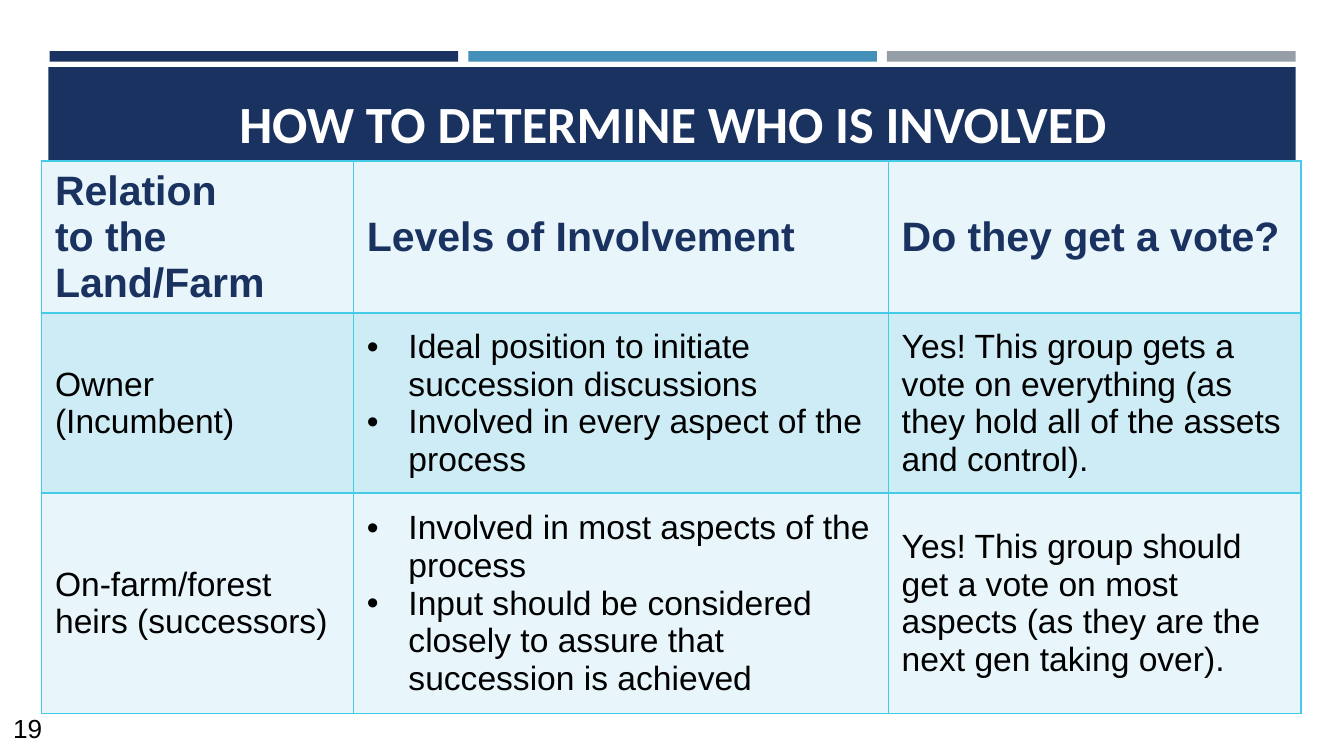
import pptx
import pptx.util
import pptx.dml.color
import pptx.enum.shapes
import pptx.enum.text
import pptx.oxml.ns
import lxml.etree

Inches, Pt = pptx.util.Inches, pptx.util.Pt
RGB = pptx.dml.color.RGBColor
qn = pptx.oxml.ns.qn
ANCHOR = pptx.enum.text.MSO_ANCHOR

NAVY = RGB(0x1A, 0x32, 0x60)
BLUE = RGB(0x45, 0x90, 0xB8)
GREY = RGB(0x96, 0x9F, 0xA7)
PALE = RGB(0xE8, 0xF6, 0xFB)
AQUA = RGB(0xCE, 0xEC, 0xF6)
CYAN = RGB(0x45, 0xCB, 0xE8)
WHITE = RGB(0xFF, 0xFF, 0xFF)
BLACK = RGB(0, 0, 0)


def style(para, face, size, color, bold=False):
    font = para.font
    font.name, font.size, font.bold = face, Pt(size), bold
    font.color.rgb = color


def edge(cell):
    """Draw a thin line on all four sides of a table cell."""
    props = cell._tc.get_or_add_tcPr()
    for i, tag in enumerate(("a:lnL", "a:lnR", "a:lnT", "a:lnB")):
        line = props.makeelement(qn(tag), {"w": str(Pt(1))})
        fill = lxml.etree.SubElement(line, qn("a:solidFill"))
        lxml.etree.SubElement(fill, qn("a:srgbClr"), val=str(CYAN))
        props.insert(i, line)


deck = pptx.Presentation()
deck.slide_width = Inches(10)
deck.slide_height = deck.slide_width * 9 // 16
slide = deck.slides.add_slide(deck.slide_layouts[5])
shapes = slide.shapes

# Three bars above the title band
bars = [(0.37 + 3.115 * i, 0.38, 3.04, 0.08, color)
        for i, color in enumerate((NAVY, BLUE, GREY))]
for x, y, w, h, color in bars + [(0.36, 0.5, 9.28, 0.98, NAVY)]:
    bar = shapes.add_shape(pptx.enum.shapes.MSO_SHAPE.RECTANGLE,
                           Inches(x), Inches(y), Inches(w), Inches(h))
    bar.shadow.inherit = False
    bar.fill.solid()
    bar.fill.fore_color.rgb = color
    bar.line.fill.background()

# Slide number
box = shapes.add_textbox(Inches(0), Inches(5.25), Inches(0.53), Inches(0.37))
box.text_frame.word_wrap = True
box.text_frame.text = "19"
style(box.text_frame.paragraphs[0], "Arial", 14, BLACK)

# Title, brought in front of its band
title = shapes.title
title.element.getparent().append(title.element)
title.left, title.top = Inches(0.48), Inches(0.58)
title.width, title.height = Inches(9.05), Inches(0.83)
frame = title.text_frame
frame.text = "HOW TO DETERMINE WHO IS INVOLVED"
frame.vertical_anchor = ANCHOR.TOP
frame.margin_top = frame.margin_bottom = Inches(0.1)
frame.paragraphs[0].alignment = pptx.enum.text.PP_ALIGN.CENTER
style(frame.paragraphs[0], "Calibri", 28, WHITE, True)

# Table: one list of paragraphs per cell
ROWS = [
    [["Relation", "to the Land/Farm"],
     ["Levels of Involvement"],
     ["Do they get a vote?"]],
    [["Owner (Incumbent)"],
     ["Ideal position to initiate succession discussions",
      "Involved in every aspect of the process"],
     ["Yes! This group gets a vote on everything "
      "(as they hold all of the assets and control)."]],
    [["On-farm/forest heirs (successors)"],
     ["Involved in most aspects of the process",
      "Input should be considered closely to assure "
      "that succession is achieved"],
     ["Yes! This group should get a vote on most aspects "
      "(as they are the next gen taking over)."]],
]
table = shapes.add_table(3, 3, Inches(0.31), Inches(1.2),
                         Inches(9.37), Inches(4.11)).table
for col, width in zip(table.columns, (2.32, 3.98, 3.07)):
    col.width = Inches(width)
for row, height in zip(table.rows, (1.13, 1.34, 1.64)):
    row.height = Inches(height)

for r, row in enumerate(ROWS):
    for c, lines in enumerate(row):
        cell = table.cell(r, c)
        cell.vertical_anchor = ANCHOR.MIDDLE
        cell.fill.solid()
        cell.fill.fore_color.rgb = AQUA if r == 1 else PALE
        edge(cell)
        cell.text_frame.text = "\n".join(lines)
        for para in cell.text_frame.paragraphs:
            if r == 0:
                style(para, "Arial", 22, NAVY, True)
                continue
            style(para, "Arial", 18, BLACK)
            if c == 1:
                props = para._p.get_or_add_pPr()
                props.set("marL", str(Inches(0.31)))
                props.set("indent", str(Inches(-0.31)))
                face = props.makeelement(qn("a:buFont"), {"typeface": "Arial"})
                mark = props.makeelement(qn("a:buChar"), {"char": "•"})
                props.insert(0, face)
                props.insert(1, mark)

deck.save("out.pptx")
